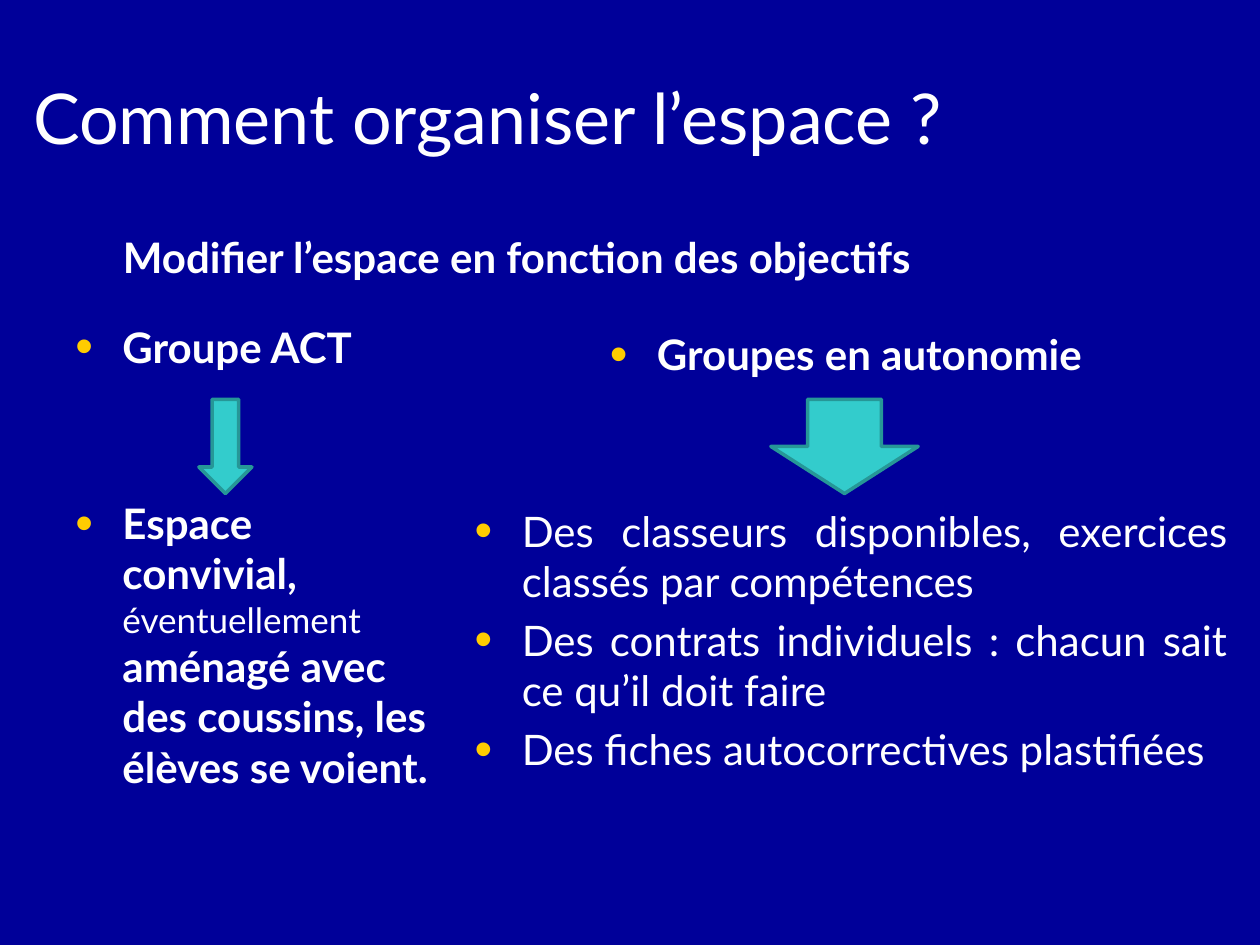
from dataclasses import dataclass

import lxml.etree
import pptx
import pptx.dml.color
import pptx.enum.shapes
import pptx.enum.text
import pptx.oxml.ns
import pptx.util

Cm, Pt = pptx.util.Cm, pptx.util.Pt
RGB = pptx.dml.color.RGBColor.from_string
ALIGN, ANCHOR = pptx.enum.text.PP_ALIGN, pptx.enum.text.MSO_ANCHOR


@dataclass(frozen=True)
class Theme:
    font: str = "Lato"
    background: str = "000099"
    text: str = "FFFFFF"
    bullet: str = "FFCC00"
    arrow: str = "33CCCC"
    arrow_line: str = "269797"
    title: int = 40
    body: int = 24
    small: int = 20


theme = Theme()


def add_text(s, box, paragraphs, anchor=ANCHOR.TOP):
    """Add a text box; each paragraph is (align, space before, bulleted, runs)."""
    tf = s.shapes.add_textbox(*(Cm(v) for v in box)).text_frame
    tf.word_wrap = True
    tf.vertical_anchor = anchor
    for i, (align, before, bulleted, runs) in enumerate(paragraphs):
        p = tf.paragraphs[0] if i == 0 else tf.add_paragraph()
        if bulleted:
            add_bullet(p)
        p.alignment = align
        p.space_before = Pt(before)
        for text, size, bold in runs:
            r = p.add_run()
            r.text = text
            r.font.name = theme.font
            r.font.size = Pt(size)
            r.font.bold = bold
            r.font.color.rgb = RGB(theme.text)


def add_bullet(p):
    qn = pptx.oxml.ns.qn
    pPr = p._p.get_or_add_pPr()
    indent = Cm(0.95)
    pPr.set("marL", str(indent))
    pPr.set("indent", str(-indent))
    color = lxml.etree.SubElement(pPr, qn("a:buClr"))
    lxml.etree.SubElement(color, qn("a:srgbClr"), val=theme.bullet)
    lxml.etree.SubElement(pPr, qn("a:buSzPct"), val="120000")
    lxml.etree.SubElement(pPr, qn("a:buFont"), typeface="Arial")
    lxml.etree.SubElement(pPr, qn("a:buChar"), char="•")


prs = pptx.Presentation()
prs.slide_width, prs.slide_height = Cm(25.4), Cm(19.05)
s = prs.slides.add_slide(prs.slide_layouts[6])
s.background.fill.solid()
s.background.fill.fore_color.rgb = RGB(theme.background)

# Title and subtitle
add_text(s, (0.42, 0.76, 24.98, 3.18),
         [(ALIGN.LEFT, 0, False, [("Comment organiser l’espace ?", theme.title, False)])],
         ANCHOR.MIDDLE)
add_text(s, (2.23, 4.02, 19.47, 1.78),
         [(ALIGN.LEFT, 0, False,
           [("Modifier l’espace en fonction des objectifs", theme.body, True)])],
         ANCHOR.BOTTOM)

# Two columns: the gap under each heading leaves room for its arrow
arrow_gap, item_gap = 72, 4.8
add_text(s, (9.32, 6.5, 15.67, 10.64), [
    (ALIGN.CENTER, 0, True, [("Groupes en autonomie ", theme.body, True)]),
    (ALIGN.JUSTIFY, arrow_gap, True,
     [("Des classeurs disponibles, exercices classés par compétences ", theme.body, False)]),
    (ALIGN.JUSTIFY, item_gap, True,
     [("Des contrats individuels : chacun sait ce qu’il doit faire", theme.body, False)]),
    (ALIGN.JUSTIFY, item_gap, True,
     [("Des fiches autocorrectives plastifiées", theme.body, False)]),
])
add_text(s, (1.27, 6.35, 7.62, 10.39), [
    (ALIGN.LEFT, 0, True, [("Groupe ACT", theme.body, True)]),
    (ALIGN.LEFT, arrow_gap, True, [
        ("Espace convivial, ", theme.body, True),
        ("éventuellement ", theme.small, False),
        ("aménagé avec des coussins, les élèves se voient.", theme.body, True),
    ]),
])

# Arrows from heading to details
for left, width in ((4.01, 1.07), (15.54, 2.97)):
    arrow = s.shapes.add_shape(pptx.enum.shapes.MSO_SHAPE.DOWN_ARROW,
                               Cm(left), Cm(8.05), Cm(width), Cm(1.9))
    arrow.shadow.inherit = False
    arrow.fill.solid()
    arrow.fill.fore_color.rgb = RGB(theme.arrow)
    arrow.line.color.rgb = RGB(theme.arrow_line)
    arrow.line.width = Pt(2)

prs.save("out.pptx")
